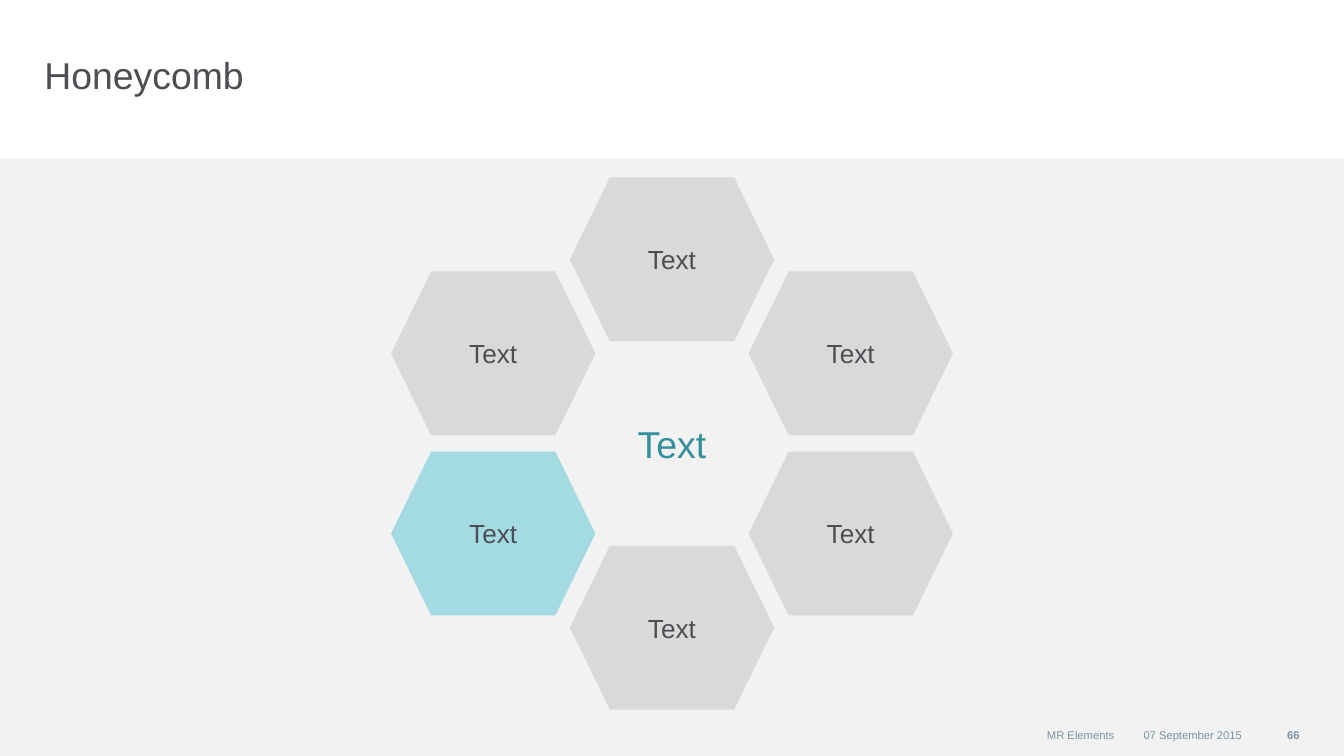
"""Build a slide with six hexagons arranged as a honeycomb around a central label."""
import pptx
import pptx.dml.color
import pptx.enum.shapes
import pptx.enum.text
import pptx.util

WIDTH = 10
HEIGHT = WIDTH * 9 / 16
BAND_TOP = 1.18
CENTRE_X, CENTRE_Y = 5, 3.3
CELL_WIDTH, CELL_HEIGHT = 1.52, 1.22
CORE_WIDTH = 2.16
COLUMN_STEP, SIDE_STEP, MIDDLE_STEP = 1.33, 0.67, 1.37
FOOTER_TOP, FOOTER_HEIGHT = 5.36, 0.22

INK, TEAL, MUTED = "4D4E53", "34909C", "7A94A3"
GREY, AQUA, PALE = "D9D9D9", "A4DAE1", "F2F2F2"

TITLE = "Honeycomb"
CORE = "Text"
CELLS = [
    ("Text", -1, -1, GREY),
    ("Text", -1, 1, AQUA),
    ("Text", 0, 1, GREY),
    ("Text", 1, -1, GREY),
    ("Text", 1, 1, GREY),
    ("Text", 0, -1, GREY),
]
FOOTERS = [
    ("07 September 2015", 8.33, 0.91, False),
    ("MR Elements", 4.35, 3.94, False),
    ("66", 9.24, 0.43, True),
]

SHAPES = pptx.enum.shapes.MSO_SHAPE
ALIGN = pptx.enum.text.PP_ALIGN
ANCHOR = pptx.enum.text.MSO_ANCHOR


def colour(value):
    return pptx.dml.color.RGBColor.from_string(value)


def inches(*lengths):
    return [pptx.util.Inches(length) for length in lengths]


def write(box, text, size, ink, align, anchor, insets=(0, 0), wrap=True, bold=False):
    frame = box.text_frame
    frame.word_wrap = wrap
    frame.vertical_anchor = anchor
    side, end = inches(*insets)
    frame.margin_left = frame.margin_right = side
    frame.margin_top = frame.margin_bottom = end
    para = frame.paragraphs[0]
    para.text = text
    para.alignment = align
    font = para.runs[0].font
    font.name, font.size, font.bold = "Arial", pptx.util.Pt(size), bold
    font.color.rgb = colour(ink)


def add_shape(slide, kind, area, fill=None):
    shape = slide.shapes.add_shape(kind, *inches(*area))
    shape.shadow.inherit = False
    shape.line.fill.background()
    if fill:
        shape.fill.solid()
        shape.fill.fore_color.rgb = colour(fill)
    else:
        shape.fill.background()
    return shape


def add_hexagon(slide, x, y, width, fill=None):
    area = (x - width / 2, y - CELL_HEIGHT / 2, width, CELL_HEIGHT)
    hexagon = add_shape(slide, SHAPES.HEXAGON, area, fill)
    hexagon.adjustments[0] = 0.244
    return hexagon


def main():
    deck = pptx.Presentation()
    deck.slide_width, deck.slide_height = inches(WIDTH, HEIGHT)
    slide = deck.slides.add_slide(deck.slide_layouts[6])

    add_shape(slide, SHAPES.RECTANGLE, (0, BAND_TOP, WIDTH, HEIGHT - BAND_TOP), PALE)
    title = slide.shapes.add_textbox(*inches(0.33, 0.39, 7.48, 0.61))
    write(title, TITLE, 20, INK, ALIGN.LEFT, ANCHOR.TOP)

    core = add_hexagon(slide, CENTRE_X, CENTRE_Y, CORE_WIDTH)
    write(core, CORE, 20, TEAL, ALIGN.CENTER, ANCHOR.MIDDLE, (0.07, 0.07), wrap=False)
    for text, column, side, fill in CELLS:
        step = SIDE_STEP if column else MIDDLE_STEP
        x, y = CENTRE_X + column * COLUMN_STEP, CENTRE_Y + side * step
        cell = add_hexagon(slide, x, y, CELL_WIDTH, fill)
        write(cell, text, 14, INK, ALIGN.CENTER, ANCHOR.MIDDLE, (0, 0.07))

    for text, left, width, bold in FOOTERS:
        box = slide.shapes.add_textbox(*inches(left, FOOTER_TOP, width, FOOTER_HEIGHT))
        write(box, text, 6, MUTED, ALIGN.RIGHT, ANCHOR.MIDDLE, bold=bold)

    deck.save("out.pptx")


if __name__ == "__main__":
    main()
